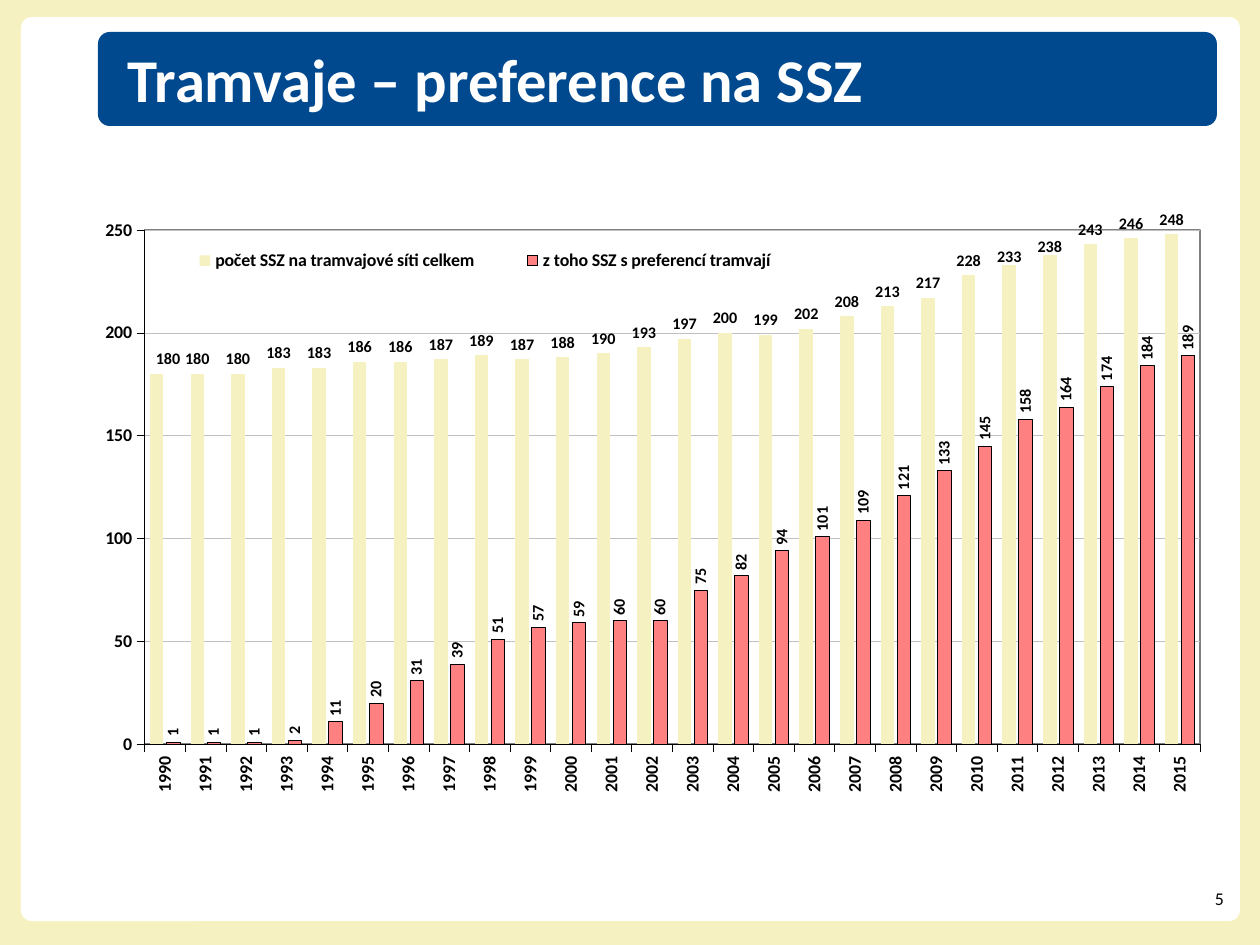
from dataclasses import dataclass

from lxml.etree import _Element
from pptx import Presentation
from pptx.chart.axis import _BaseAxis
from pptx.chart.chart import Chart
from pptx.chart.data import CategoryChartData
from pptx.chart.series import BarSeries
from pptx.dml.color import RGBColor
from pptx.dml.fill import FillFormat
from pptx.dml.line import LineFormat
from pptx.enum.chart import XL_CHART_TYPE, XL_LABEL_POSITION, XL_LEGEND_POSITION, XL_TICK_MARK
from pptx.enum.shapes import MSO_SHAPE
from pptx.enum.text import MSO_ANCHOR, PP_ALIGN
from pptx.oxml import parse_xml
from pptx.oxml.ns import nsdecls
from pptx.slide import Slide
from pptx.text.text import Font
from pptx.util import Emu, Pt

COLORS = {
    "cream": "F6F1C0", "white": "FFFFFF", "blue": "00498F", "black": "000000",
    "red": "FF8080", "grid": "C0C0C0", "border": "808080",
}
FONT = "Calibri"
YEARS = range(1990, 2016)
VERTICAL = -90 * 60000


@dataclass(frozen=True)
class Box:
    left: int
    top: int
    width: int
    height: int

    def emu(self) -> tuple[Emu, ...]:
        return tuple(px(n) for n in (self.left, self.top, self.width, self.height))


@dataclass(frozen=True)
class Panel:
    box: Box
    color: str
    corner: float


@dataclass(frozen=True)
class Label:
    box: Box
    text: str
    size: int
    color: str
    bold: bool
    align: PP_ALIGN
    wrap: bool


@dataclass(frozen=True)
class Signals:
    name: str
    values: tuple[int, ...]
    color: str
    outlined: bool
    rotation: int


PANELS = [
    Panel(Box(21, 17, 1219, 904), "white", 0.012),
    Panel(Box(98, 32, 1119, 94), "blue", 0.126),
]
LABELS = [
    Label(Box(1203, 887, 21, 22), "5", 10, "black", False, PP_ALIGN.RIGHT, False),
    Label(Box(128, 42, 1072, 73), "Tramvaje – preference na SSZ", 34, "white", True,
          PP_ALIGN.LEFT, True),
]
CHART_BOX = Box(87, 197, 1129, 660)
SERIES = [
    Signals("počet SSZ na tramvajové síti celkem",
            (180, 180, 180, 183, 183, 186, 186, 187, 189, 187, 188, 190, 193,
             197, 200, 199, 202, 208, 213, 217, 228, 233, 238, 243, 246, 248),
            "cream", False, 0),
    Signals("z toho SSZ s preferencí tramvají",
            (1, 1, 1, 2, 11, 20, 31, 39, 51, 57, 59, 60, 60,
             75, 82, 94, 101, 109, 121, 133, 145, 158, 164, 174, 184, 189),
            "red", True, VERTICAL),
]
# Labels moved by hand: year -> shift as a share of the chart
LABEL_SHIFTS = {1990: (0.01, 0), 2011: (0, 0.01), 2012: (0, 0.01)}
WHITE_LABEL_YEARS = range(2010, 2015)


def px(count: int) -> Emu:
    return Emu(count * 7112)


def rgb(color: str) -> RGBColor:
    return RGBColor.from_string(COLORS[color])


def paint(fill: FillFormat, color: str) -> None:
    fill.solid()
    fill.fore_color.rgb = rgb(color)


def style_font(font: Font, size: int, color: str = "black", bold: bool = True) -> None:
    font.name, font.size, font.bold = FONT, Pt(size), bold
    font.color.rgb = rgb(color)


def style_line(line: LineFormat, color: str) -> None:
    line.width = Pt(0.25)
    line.color.rgb = rgb(color)


def rotate_text(parent: _Element, angle: int) -> None:
    body = parent.xpath("./c:txPr/a:bodyPr")[0]
    body.set("rot", str(angle))
    body.set("vert", "horz")


def set_layout(parent: _Element, index: int, **settings: object) -> None:
    for old in parent.xpath("./c:layout"):
        parent.remove(old)
    items = "".join(f'<c:{name} val="{value}"/>' for name, value in settings.items())
    parent.insert(index, parse_xml(
        f'<c:layout {nsdecls("c")}><c:manualLayout>{items}</c:manualLayout></c:layout>'))


def shape_properties(fill: str, line: str = "") -> _Element:
    solid = '<a:solidFill><a:srgbClr val="{}"/></a:solidFill>'
    outline = f'<a:ln w="9525">{solid.format(COLORS[line])}</a:ln>' if line else ""
    return parse_xml(f'<c:spPr {nsdecls("c", "a")}>{solid.format(COLORS[fill])}{outline}</c:spPr>')


def add_panel(slide: Slide, panel: Panel) -> None:
    shape = slide.shapes.add_shape(MSO_SHAPE.ROUNDED_RECTANGLE, *panel.box.emu())
    shape.adjustments[0] = panel.corner
    shape.shadow.inherit = False
    paint(shape.fill, panel.color)
    shape.line.fill.background()


def add_label(slide: Slide, label: Label) -> None:
    frame = slide.shapes.add_textbox(*label.box.emu()).text_frame
    frame.margin_left = frame.margin_right = frame.margin_top = frame.margin_bottom = 0
    frame.vertical_anchor = MSO_ANCHOR.MIDDLE
    frame.word_wrap = label.wrap
    paragraph = frame.paragraphs[0]
    paragraph.text = label.text
    paragraph.alignment = label.align
    style_font(paragraph.font, label.size, label.color, label.bold)


def style_axis(axis: _BaseAxis) -> None:
    axis.major_tick_mark = XL_TICK_MARK.OUTSIDE
    axis.minor_tick_mark = XL_TICK_MARK.NONE
    style_font(axis.tick_labels.font, 10)
    style_line(axis.format.line, "black")


def style_series(series: BarSeries, signals: Signals) -> None:
    paint(series.format.fill, signals.color)
    if signals.outlined:
        style_line(series.format.line, "black")
    else:
        series.format.line.fill.background()
    labels = series.data_labels
    labels.show_value = True
    labels.position = XL_LABEL_POSITION.OUTSIDE_END
    style_font(labels.font, 9)
    rotate_text(series._element.xpath("./c:dLbls")[0], signals.rotation)


def adjust_labels(series: BarSeries) -> None:
    for year in sorted({*LABEL_SHIFTS, *WHITE_LABEL_YEARS}):
        index = year - YEARS[0]
        label = series.points[index].data_label
        style_font(label.font, 9)
        label.position = XL_LABEL_POSITION.OUTSIDE_END
        element = series._element.xpath(f"./c:dLbls/c:dLbl[c:idx/@val={index}]")[0]
        if year in WHITE_LABEL_YEARS:
            element.insert(1, shape_properties("white"))
        if year in LABEL_SHIFTS:
            x, y = LABEL_SHIFTS[year]
            set_layout(element, 1, x=x, y=y)


def add_signal_chart(slide: Slide) -> Chart:
    data = CategoryChartData()
    data.categories = [str(year) for year in YEARS]
    for signals in SERIES:
        data.add_series(signals.name, signals.values)
    chart = slide.shapes.add_chart(
        XL_CHART_TYPE.COLUMN_CLUSTERED, *CHART_BOX.emu(), data).chart
    chart.has_title = False
    style_font(chart.font, 10)

    # Axes
    category_axis, value_axis = chart.category_axis, chart.value_axis
    for axis in (category_axis, value_axis):
        style_axis(axis)
    rotate_text(category_axis._element, VERTICAL)
    value_axis.minimum_scale, value_axis.maximum_scale = 0, 250
    value_axis.major_unit = 50
    style_line(value_axis.major_gridlines.format.line, "grid")

    # Columns and their values
    plot = chart.plots[0]
    plot.gap_width, plot.overlap, plot.vary_by_categories = 80, -20, False
    for series, signals in zip(plot.series, SERIES):
        style_series(series, signals)
    adjust_labels(plot.series[0])

    # Plot area and legend
    area = chart._chartSpace.xpath("./c:chart/c:plotArea")[0]
    set_layout(area, 0, layoutTarget="inner", xMode="edge", yMode="edge",
               x=0.051, y=0.05, w=0.935, h=0.779)
    area.append(shape_properties("white", "border"))
    chart.has_legend = True
    chart.legend.position = XL_LEGEND_POSITION.RIGHT
    chart.legend.include_in_layout = True
    style_font(chart.legend.font, 10)
    set_layout(chart.legend._element, 1, xMode="edge", yMode="edge",
               x=0.058, y=0.074, w=0.589, h=0.045)
    return chart


def main() -> None:
    presentation = Presentation()
    presentation.slide_width, presentation.slide_height = px(1260), px(945)
    slide = presentation.slides.add_slide(presentation.slide_layouts[6])
    paint(slide.background.fill, "cream")
    for panel in PANELS:
        add_panel(slide, panel)
    for label in LABELS:
        add_label(slide, label)
    add_signal_chart(slide)
    presentation.save("out.pptx")


if __name__ == "__main__":
    main()
